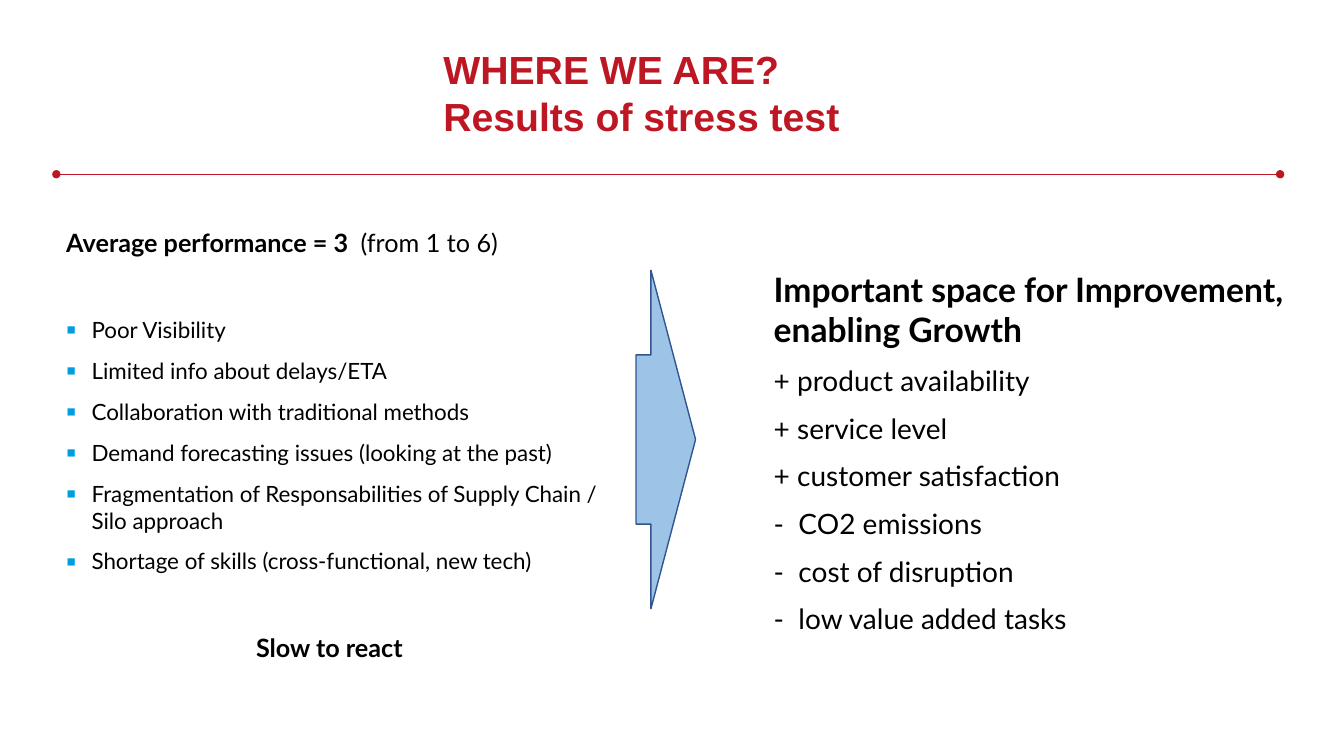
"""Builds the slide on the results of the stress test."""
from dataclasses import dataclass

from lxml.etree import SubElement
from pptx import Presentation
from pptx.dml.color import RGBColor
from pptx.enum.shapes import MSO_CONNECTOR as Line, MSO_SHAPE as Shape
from pptx.enum.text import MSO_ANCHOR as Anchor, MSO_AUTO_SIZE as Fit, PP_ALIGN as Align
from pptx.oxml.ns import qn
from pptx.slide import Slide
from pptx.text.text import TextFrame, _Paragraph as Paragraph
from pptx.util import Cm, Pt

RED = RGBColor(0xBE, 0x17, 0x24)
BLACK = RGBColor(0, 0, 0)
CYAN = RGBColor(0x00, 0x9E, 0xE0)
SKY = RGBColor(0x9D, 0xC3, 0xE6)
NAVY = RGBColor(0x32, 0x54, 0x91)


@dataclass
class Item:
    """A paragraph, with an optional plain tail after its main text."""
    text: str
    size: float
    bold: bool = False
    tail: str = ""
    bullet: bool = False
    align: Align = Align.LEFT
    before: float = 10
    font: str = "Lato"
    color: RGBColor = BLACK
    pitch: float = 0


@dataclass
class Box:
    """A text box, with its lengths in centimetres."""
    left: float
    top: float
    width: float
    height: float
    items: list[Item]
    inset: float = 0.13


TITLE = [Item(text, 28, True, before=0, font="Arial", color=RED, pitch=33.6)
         for text in ("WHERE WE ARE?", "Results of stress test")]
ISSUES = [
    "Poor Visibility",
    "Limited info about delays/ETA",
    "Collaboration with traditional methods",
    "Demand forecasting issues (looking at the past)",
    "Fragmentation of Responsabilities of Supply Chain / Silo approach",
    "Shortage of skills (cross-functional, new tech)",
]
GAINS = [
    "+ product availability",
    "+ service level",
    "+ customer satisfaction",
    "-  CO2 emissions",
    "-  cost of disruption",
    "-  low value added tasks",
]
BOXES = [
    Box(1.42, 5.61, 15.8, 2.11,
        [Item("Average performance = 3  ", 18, True, "(from 1 to 6)")]),
    Box(1.42, 6.73, 13.92, 11.53,
        [Item(text, 16, bullet=True) for text in ISSUES]
        + [Item("Slow to react ", 18, True, align=Align.CENTER, before=41.6)],
        inset=1.24),
    Box(19.25, 6.65, 13.82, 10.03,
        [Item("Important space for Improvement, enabling Growth", 24, True)]
        + [Item(text, 20) for text in GAINS]),
]


def add_bullet(para: Paragraph) -> None:
    """Give the paragraph a hanging square bullet."""
    props = para._p.get_or_add_pPr()
    indent = Cm(0.64)
    props.set("marL", str(indent))
    props.set("indent", str(-indent))
    color = SubElement(props, qn("a:buClr"))
    SubElement(color, qn("a:srgbClr"), val=str(CYAN))
    SubElement(props, qn("a:buSzPct"), val="130000")
    SubElement(props, qn("a:buFont"), typeface="Arial")
    SubElement(props, qn("a:buChar"), char="▪")


def write(frame: TextFrame, items: list[Item]) -> None:
    """Fill the frame with one paragraph per item."""
    frame.word_wrap = True
    frame.auto_size = Fit.NONE
    frame.vertical_anchor = Anchor.TOP
    for i, item in enumerate(items):
        para = frame.add_paragraph() if i else frame.paragraphs[0]
        para.alignment = item.align
        para.space_before = Pt(item.before)
        if item.pitch:
            para.line_spacing = Pt(item.pitch)
        if item.bullet:
            add_bullet(para)
        font = para.font
        font.name = item.font
        font.size = Pt(item.size)
        font.bold = item.bold
        font.color.rgb = item.color
        para.add_run().text = item.text
        if item.tail:
            tail = para.add_run()
            tail.text = item.tail
            tail.font.bold = False


def add_title(slide: Slide) -> None:
    """Place and fill the title."""
    title = slide.shapes.title
    title.left, title.top = Cm(10.92), Cm(1.02)
    title.width, title.height = Cm(21.34), Cm(2.64)
    write(title.text_frame, TITLE)


def add_rule(slide: Slide) -> None:
    """Draw the dotted-end rule below the title."""
    rule = slide.shapes.add_connector(
        Line.STRAIGHT, Cm(1.42), Cm(4.39), Cm(32.26), Cm(4.39))
    rule.line.color.rgb = RED
    rule.line.width = Pt(0.75)
    for end in ("a:headEnd", "a:tailEnd"):
        SubElement(rule.line._get_or_add_ln(), qn(end), type="oval")
    SubElement(rule._element.spPr, qn("a:effectLst"))


def add_box(slide: Slide, box: Box) -> None:
    """Draw a text box."""
    shape = slide.shapes.add_textbox(
        Cm(box.left), Cm(box.top), Cm(box.width), Cm(box.height))
    shape.text_frame.margin_top = Cm(box.inset)
    write(shape.text_frame, box.items)


def add_arrow(slide: Slide) -> None:
    """Draw the arrow from the issues to the gains."""
    arrow = slide.shapes.add_shape(
        Shape.RIGHT_ARROW, Cm(16.03), Cm(6.81), Cm(1.5), Cm(8.53))
    arrow.adjustments[0] = 0.5
    arrow.adjustments[1] = 0.75
    arrow.shadow.inherit = False
    arrow.fill.solid()
    arrow.fill.fore_color.rgb = SKY
    arrow.line.color.rgb = NAVY
    arrow.line.width = Pt(1)


def main() -> None:
    """Build and save the slide."""
    deck = Presentation()
    deck.slide_width, deck.slide_height = Cm(33.87), Cm(19.05)
    slide = deck.slides.add_slide(deck.slide_layouts[5])
    add_title(slide)
    add_rule(slide)
    for box in BOXES:
        add_box(slide, box)
    add_arrow(slide)
    deck.save("out.pptx")


if __name__ == "__main__":
    main()
